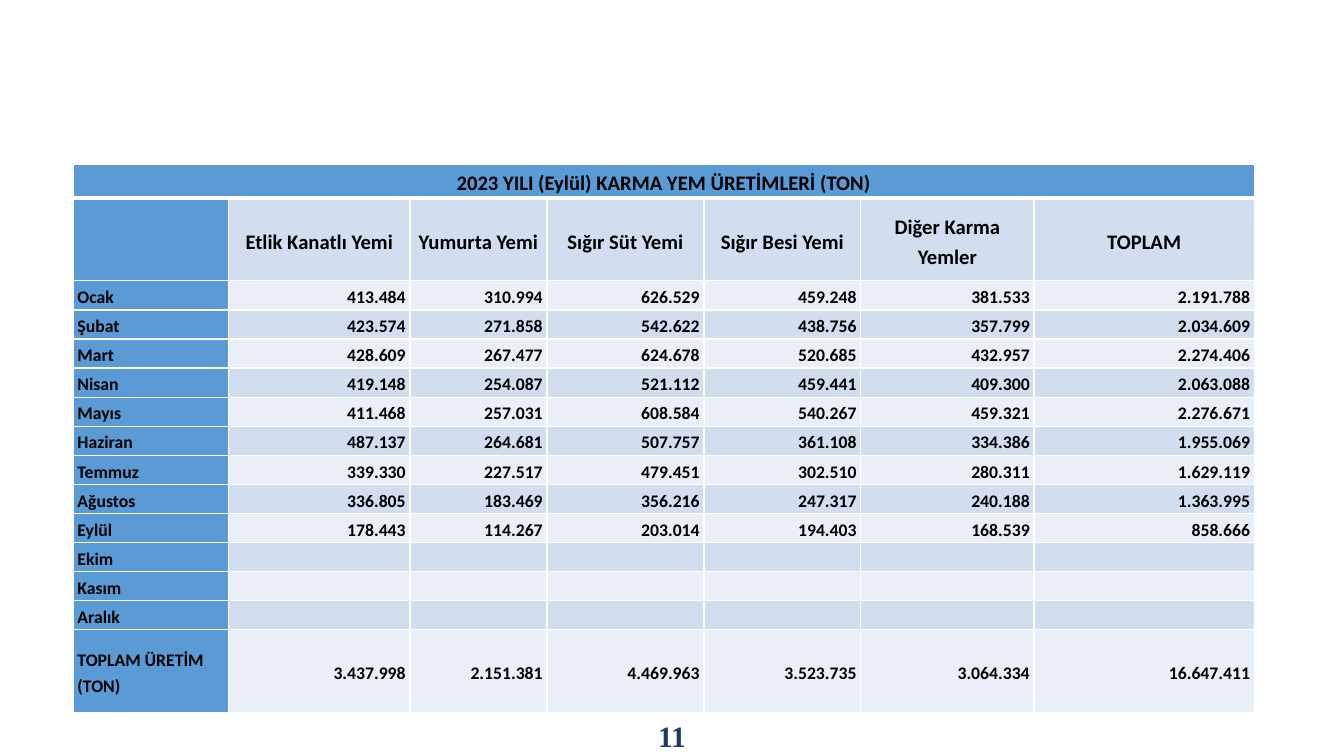
import pptx
import pptx.dml.color
import pptx.enum.text
import pptx.oxml
import pptx.oxml.ns
import pptx.util

Pt = pptx.util.Pt
Align = pptx.enum.text.PP_ALIGN
Anchor = pptx.enum.text.MSO_ANCHOR

TITLE = "2023 YILI (Eylül) KARMA YEM ÜRETİMLERİ (TON)"
HEADS = ["", "Etlik Kanatlı Yemi", "Yumurta Yemi", "Sığır Süt Yemi",
         "Sığır Besi Yemi", "Diğer Karma Yemler", "TOPLAM"]
MONTHS = [
    ["Ocak", "413.484", "310.994", "626.529", "459.248", "381.533", "2.191.788"],
    ["Şubat", "423.574", "271.858", "542.622", "438.756", "357.799", "2.034.609"],
    ["Mart", "428.609", "267.477", "624.678", "520.685", "432.957", "2.274.406"],
    ["Nisan", "419.148", "254.087", "521.112", "459.441", "409.300", "2.063.088"],
    ["Mayıs", "411.468", "257.031", "608.584", "540.267", "459.321", "2.276.671"],
    ["Haziran", "487.137", "264.681", "507.757", "361.108", "334.386", "1.955.069"],
    ["Temmuz", "339.330", "227.517", "479.451", "302.510", "280.311", "1.629.119"],
    ["Ağustos", "336.805", "183.469", "356.216", "247.317", "240.188", "1.363.995"],
    ["Eylül", "178.443", "114.267", "203.014", "194.403", "168.539", "858.666"],
    ["Ekim"] + [""] * 6,
    ["Kasım"] + [""] * 6,
    ["Aralık"] + [""] * 6,
]
TOTAL = ["TOPLAM ÜRETİM (TON)", "3.437.998", "2.151.381", "4.469.963",
         "3.523.735", "3.064.334", "16.647.411"]
PAGE = "11"

THEME = {
    "blue": "5B9BD5", "bands": ["D2DEEF", "EAEFF7"], "line": "FFFFFF",
    "ink": "000000", "navy": "203864",
    "font": "Calibri", "serif": "Times New Roman",
    "head": 14, "body": 12, "page": 20,
}
WIDTHS = [105.5, 123, 93, 106.5, 106.5, 117.5, 149.5]
HEIGHTS = [23, 56] + [19.75] * len(MONTHS) + [56]
WIDE, HIGH = 912, 513
LEFT, TOP = 49.7, 111.6


def color(code):
    return pptx.dml.color.RGBColor.from_string(code)


def write(frame, text, size=THEME["body"], font=THEME["font"],
          ink=THEME["ink"], align=Align.LEFT, space=1.0):
    para = frame.paragraphs[0]
    para.alignment = align
    para.line_spacing = space
    if not text:
        para._p.get_or_add_endParaRPr().set("sz", str(size * 100))
        return
    run = para.add_run()
    run.text = text
    run.font.size = Pt(size)
    run.font.name = font
    run.font.bold = True
    run.font.color.rgb = color(ink)


def border(cell, **sides):
    props = cell._tc.get_or_add_tcPr()
    for side in "LRTB":
        width = Pt(sides.get(side, 1))
        props.append(pptx.oxml.parse_xml(
            f'<a:ln{side} {pptx.oxml.ns.nsdecls("a")} w="{width}"><a:solidFill>'
            f'<a:srgbClr val="{THEME["line"]}"/></a:solidFill></a:ln{side}>'))


def style(cell, row, col):
    cell.margin_left = cell.margin_right = Pt(2.9)
    cell.margin_top = cell.margin_bottom = 0
    cell.vertical_anchor = Anchor.MIDDLE
    border(cell, B=3 if row == 0 else 1)
    cell.fill.solid()
    blue = row == 0 or col == 0
    cell.fill.fore_color.rgb = color(
        THEME["blue"] if blue else THEME["bands"][(row + 1) % 2])


def build(slide):
    rows = [[TITLE] + [""] * 6, HEADS] + MONTHS + [TOTAL]
    grid = slide.shapes.add_table(
        len(rows), len(WIDTHS), Pt(LEFT), Pt(TOP),
        Pt(sum(WIDTHS)), Pt(sum(HEIGHTS))).table
    grid.first_row = grid.horz_banding = False
    for col, width in zip(grid.columns, WIDTHS):
        col.width = Pt(width)
    for row, height in zip(grid.rows, HEIGHTS):
        row.height = Pt(height)
    for r, row in enumerate(rows):
        for c, text in enumerate(row):
            cell = grid.cell(r, c)
            style(cell, r, c)
            head = r < 2
            side = Align.RIGHT if c else Align.LEFT
            write(cell.text_frame, text, space=1.2,
                  size=THEME["head" if head else "body"],
                  align=Align.CENTER if head else side)
    grid.cell(0, 0).merge(grid.cell(0, len(WIDTHS) - 1))


def main():
    deck = pptx.Presentation()
    deck.slide_width = Pt(WIDE)
    deck.slide_height = Pt(HIGH)
    slide = deck.slides.add_slide(deck.slide_layouts[6])
    build(slide)
    frame = slide.shapes.add_textbox(
        Pt(353.5), Pt(486), Pt(205), Pt(27)).text_frame
    frame.word_wrap = True
    frame.vertical_anchor = Anchor.MIDDLE
    write(frame, PAGE, size=THEME["page"], font=THEME["serif"],
          ink=THEME["navy"], align=Align.CENTER)
    deck.save("out.pptx")


if __name__ == "__main__":
    main()
